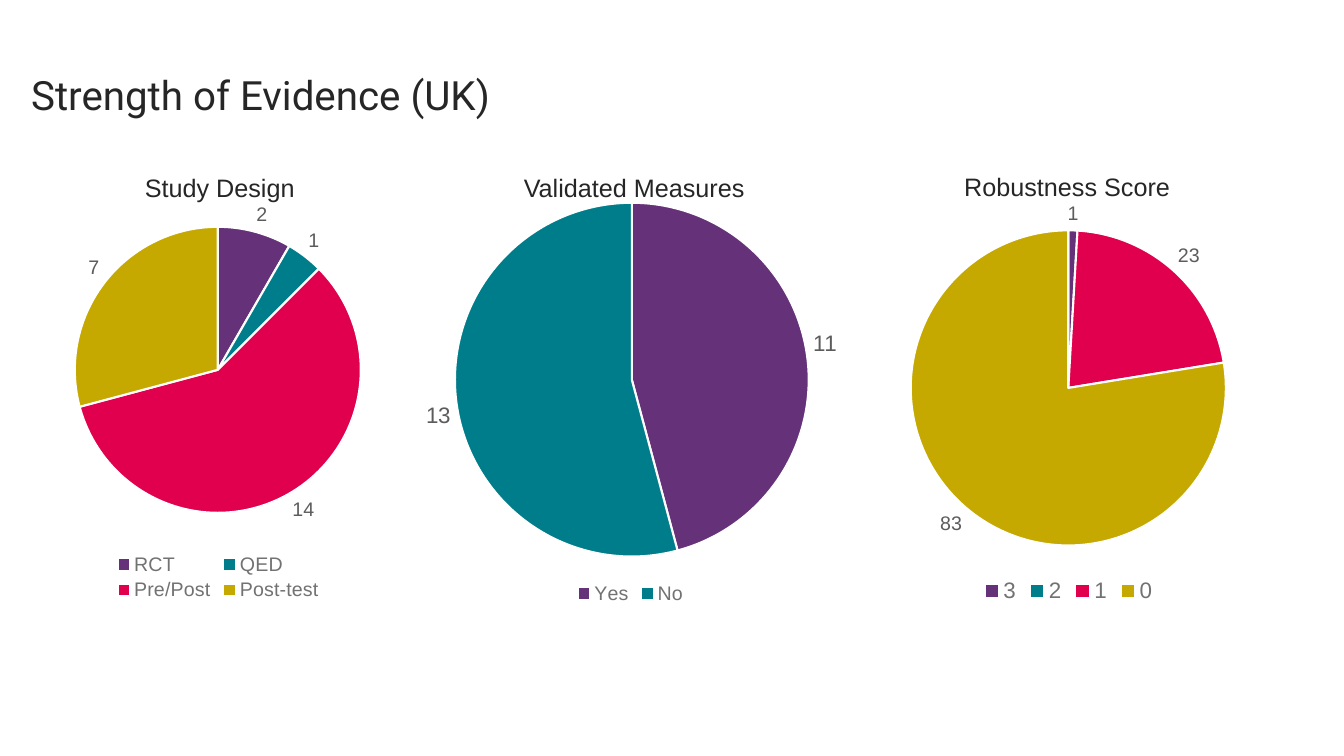
import pptx
import pptx.util
import pptx.oxml
import pptx.chart.data
from pptx.dml.color import RGBColor
from pptx.enum.chart import XL_CHART_TYPE, XL_LABEL_POSITION, XL_LEGEND_POSITION
from pptx.enum.text import MSO_ANCHOR, MSO_AUTO_SIZE, PP_ALIGN
from pptx.oxml.ns import nsdecls

Cm = pptx.util.Cm
Pt = pptx.util.Pt

INK = RGBColor(0x26, 0x26, 0x26)
GREY = RGBColor(0x72, 0x72, 0x72)
LABEL = RGBColor(0x5C, 0x5C, 0x5C)
WHITE = RGBColor(0xFF, 0xFF, 0xFF)
HUES = [
    RGBColor(0x65, 0x32, 0x79),
    RGBColor(0x00, 0x7D, 0x8A),
    RGBColor(0xE0, 0x00, 0x4D),
    RGBColor(0xC5, 0xA9, 0x00),
]

TITLE = "Strength of Evidence (UK)"
HIGH = 10.59
PIES = [
    {"head": "Study Design", "spot": (3.4, 4.22, 4.5),
     "data": {"RCT": 2, "QED": 1, "Pre/Post": 14, "Post-test": 7},
     "frame": (0.66, 4.72, 9.65), "disc": (1.89, 5.72, 7.21),
     "label": 14, "legend": 14, "key": (2.8, 13.85, 5.4, 1.4)},
    {"head": "Robustness Score", "spot": (24.05, 4.19, 5.74),
     "data": {"3": 1, "2": 0, "1": 23, "0": 83},
     "frame": (20.07, 4.72, 13.72), "disc": (22.95, 5.8, 7.95),
     "label": 14, "legend": 16, "key": None},
    {"head": "Validated Measures", "spot": (12.95, 4.22, 6.12),
     "data": {"Yes": 11, "No": 13},
     "frame": (8.86, 4.75, 14.07), "disc": (11.46, 5.11, 8.92),
     "label": 16, "legend": 14, "key": None},
]


def style(font, size, color, face="Arial"):
    font.size = Pt(size)
    font.name = face
    font.color.rgb = color


def layout(frame, box, inner=False):
    left, top, wide = frame
    x, y, w, h = box
    parts = [("x", (x - left) / wide), ("y", (y - top) / HIGH),
             ("w", w / wide), ("h", h / HIGH)]
    target = '<c:layoutTarget val="inner"/>' if inner else ""
    modes = '<c:xMode val="edge"/><c:yMode val="edge"/>'
    sizes = "".join(f'<c:{name} val="{val:.3f}"/>' for name, val in parts)
    return pptx.oxml.parse_xml(
        f'<c:layout {nsdecls("c")}><c:manualLayout>{target}{modes}{sizes}'
        '</c:manualLayout></c:layout>')


def place(parent, node, after=None):
    for old in parent.findall(node.tag):
        parent.remove(old)
    if after is None:
        parent.insert(0, node)
    else:
        after.addnext(node)


def add_head(slide, pie):
    left, top, wide = pie["spot"]
    box = slide.shapes.add_textbox(Cm(left), Cm(top), Cm(wide), Cm(1.02))
    frame = box.text_frame
    frame.word_wrap = False
    frame.auto_size = MSO_AUTO_SIZE.SHAPE_TO_FIT_TEXT
    frame.text = pie["head"]
    style(frame.paragraphs[0].runs[0].font, 18, INK)


def add_pie(slide, pie):
    left, top, wide = pie["frame"]
    data = pptx.chart.data.CategoryChartData()
    data.categories = list(pie["data"])
    data.add_series("Series 1", list(pie["data"].values()))
    chart = slide.shapes.add_chart(
        XL_CHART_TYPE.PIE, Cm(left), Cm(top), Cm(wide), Cm(HIGH), data).chart
    chart.has_title = False
    style(chart.font, 10, INK)

    chart.has_legend = True
    legend = chart.legend
    legend.position = XL_LEGEND_POSITION.BOTTOM
    legend.include_in_layout = False
    style(legend.font, pie["legend"], GREY)
    if pie["key"]:
        place(legend._element, layout(pie["frame"], pie["key"]),
              legend._element.find("{*}legendPos"))

    x, y, size = pie["disc"]
    area = chart._chartSpace.chart.plotArea
    place(area, layout(pie["frame"], (x, y, size, size), True))

    plot = chart.plots[0]
    plot.vary_by_categories = True
    series = plot.series[0]
    labels = series.data_labels
    labels.show_value = True
    labels.position = XL_LABEL_POSITION.OUTSIDE_END
    style(labels.font, pie["label"], LABEL)
    for i, value in enumerate(pie["data"].values()):
        point = series.points[i].format
        point.fill.solid()
        point.fill.fore_color.rgb = HUES[i]
        point.line.color.rgb = WHITE
        point.line.width = Pt(1.5)
        if not value:
            labels._element.insert(0, pptx.oxml.parse_xml(
                f'<c:dLbl {nsdecls("c")}><c:idx val="{i}"/>'
                '<c:delete val="1"/></c:dLbl>'))


def main():
    deck = pptx.Presentation()
    deck.slide_width = Cm(33.87)
    deck.slide_height = Cm(19.05)
    slide = deck.slides.add_slide(deck.slide_layouts[5])

    title = slide.shapes.title
    title.left, title.top = Cm(0.53), Cm(1.9)
    title.width, title.height = Cm(30.96), Cm(1.12)
    frame = title.text_frame
    frame.text = TITLE
    frame.auto_size = MSO_AUTO_SIZE.NONE
    frame.vertical_anchor = MSO_ANCHOR.MIDDLE
    line = frame.paragraphs[0]
    line.alignment = PP_ALIGN.LEFT
    line.line_spacing = 0.9
    style(line.runs[0].font, 28.8, INK, "Roboto")

    for pie in PIES:
        add_head(slide, pie)
    for pie in PIES:
        add_pie(slide, pie)
    deck.save("out.pptx")


if __name__ == "__main__":
    main()
